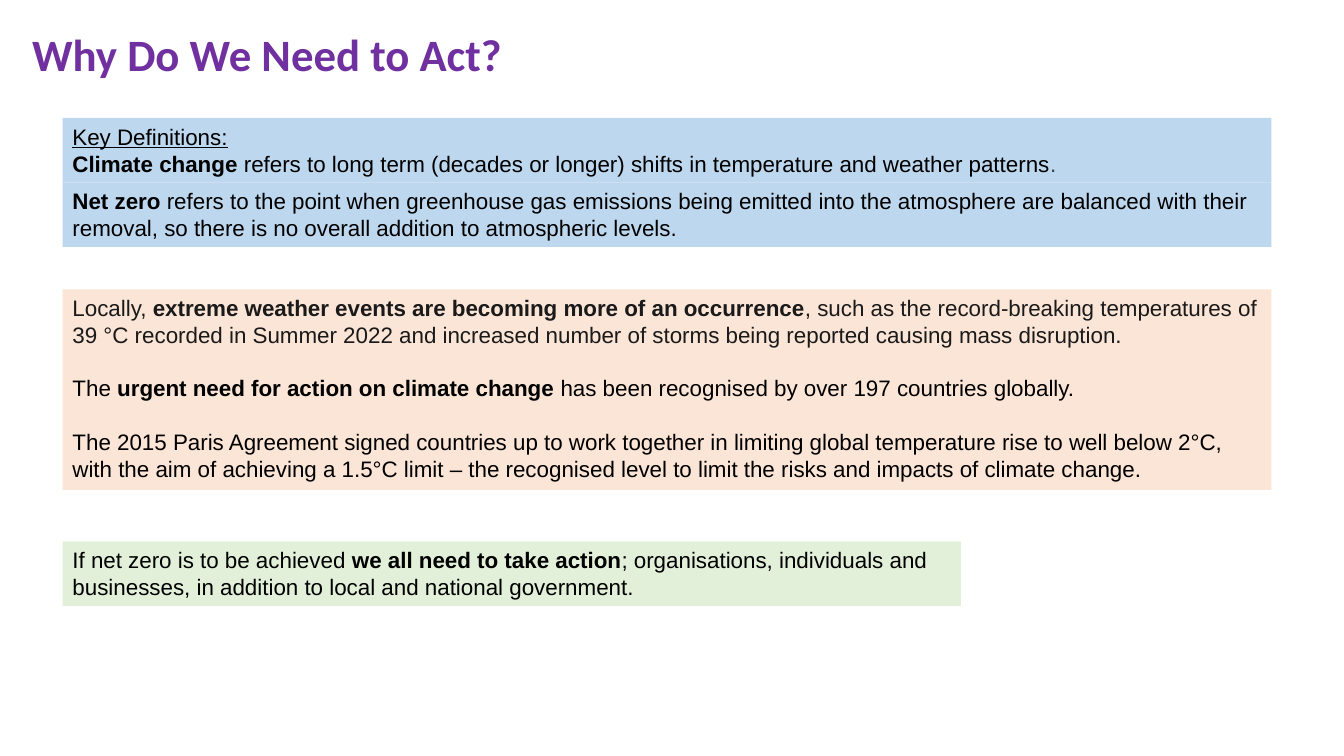
"""Build the slide on why climate action is needed."""
import pptx
import pptx.dml.color
import pptx.enum.shapes
import pptx.enum.text
import pptx.util

Inches, Pt = pptx.util.Inches, pptx.util.Pt

BLACK, GREY, DARK = "000000", "374151", "1A1A1A"
PURPLE, BLUE, PEACH, GREEN = "7030A0", "BDD7EE", "FBE5D6", "E2F0D9"
PLAIN, BOLD, UNDERLINE = "", "b", "u"

TITLE = "Why Do We Need to Act?"
DEFINITION = [
    [("Key Definitions:", UNDERLINE, BLACK)],
    [("Climate change ", BOLD, BLACK),
     ("refers to long term (decades or longer) shifts in temperature and weather patterns", PLAIN, BLACK),
     (".", PLAIN, GREY)],
]
NET_ZERO = [
    [("Net zero ", BOLD, BLACK),
     ("refers to the point when greenhouse gas emissions being emitted into the atmosphere are "
      "balanced with their removal, so there is no overall addition to atmospheric levels.", PLAIN, BLACK)],
]
REASONS = [
    [("Locally, ", PLAIN, DARK),
     ("extreme weather events are becoming more of an occurrence", BOLD, DARK),
     (", such as the record-breaking temperatures of 39 °C recorded in Summer 2022 and increased "
      "number of storms being reported causing mass disruption.", PLAIN, DARK)],
    [("The ", PLAIN, BLACK),
     ("urgent need for action on climate change ", BOLD, BLACK),
     ("has been recognised by over 197 countries globally.", PLAIN, BLACK)],
    [("The 2015 Paris Agreement signed countries up to work together in limiting global temperature "
      "rise to well below 2°C, with the aim of achieving a 1.5°C limit – the recognised level to "
      "limit the risks and impacts of climate change.", PLAIN, BLACK)],
]
ACTION = [
    [("If net zero is to be achieved ", PLAIN, BLACK),
     ("we all need to take action", BOLD, BLACK),
     ("; organisations, individuals and businesses, in addition to local and national government.",
      PLAIN, BLACK)],
]

LEFT, FULL, SHORT = 0.62, 11.99, 8.91
PANELS = [
    (1.17, FULL, 0.64, BLUE, 0, DEFINITION),
    (1.81, FULL, 0.64, BLUE, 0, NET_ZERO),
    (2.87, FULL, 1.99, PEACH, 19, REASONS),
    (5.37, SHORT, 0.64, GREEN, 0, ACTION),
]


def rgb(value):
    return pptx.dml.color.RGBColor.from_string(value)


def add_run(p, text, style, color, size, font):
    r = p.add_run()
    r.text = text
    r.font.name, r.font.size = font, Pt(size)
    r.font.bold, r.font.underline = style == BOLD, style == UNDERLINE
    r.font.color.rgb = rgb(color)


def top_frame(shape):
    tf = shape.text_frame
    tf.word_wrap = True
    tf.vertical_anchor = pptx.enum.text.MSO_ANCHOR.TOP
    return tf


def add_title(s):
    box = s.shapes.add_textbox(Inches(0.22), Inches(0.28), Inches(11.5), Inches(0.49))
    p = top_frame(box).paragraphs[0]
    p.line_spacing = 0.9
    add_run(p, TITLE, BOLD, PURPLE, 32, "Calibri")


def add_panel(s, top, width, height, fill, gap, paragraphs):
    sp = s.shapes.add_shape(pptx.enum.shapes.MSO_SHAPE.RECTANGLE,
                            Inches(LEFT), Inches(top), Inches(width), Inches(height))
    sp.shadow.inherit = False
    sp.fill.solid()
    sp.fill.fore_color.rgb = rgb(fill)
    sp.line.fill.background()
    tf = top_frame(sp)
    for i, runs in enumerate(paragraphs):
        p = tf.add_paragraph() if i else tf.paragraphs[0]
        p.alignment = pptx.enum.text.PP_ALIGN.LEFT
        if i and gap:
            p.space_before = Pt(gap)
        for text, style, color in runs:
            add_run(p, text, style, color, 16, "Arial")


def main():
    prs = pptx.Presentation()
    prs.slide_width, prs.slide_height = Inches(13.33), Inches(7.5)
    s = prs.slides.add_slide(prs.slide_layouts[6])
    add_title(s)
    for panel in PANELS:
        add_panel(s, *panel)
    prs.save("out.pptx")


if __name__ == "__main__":
    main()
